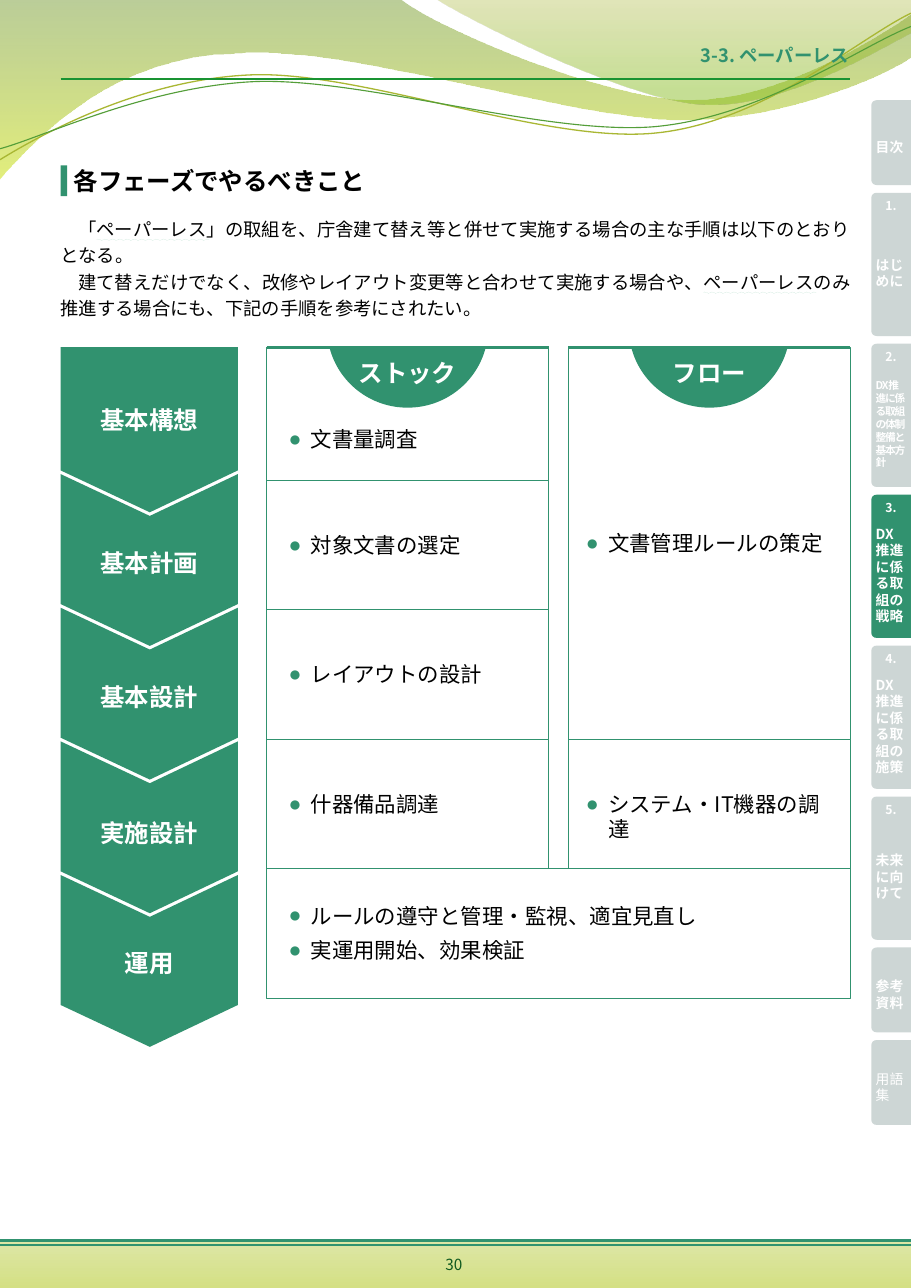
import pptx
import pptx.util
import pptx.dml.color
import pptx.enum.shapes
import pptx.enum.text
import pptx.oxml
import pptx.oxml.ns
from lxml import etree

WIDTH, HEIGHT = 8.27, 11.69
LEFT, RIGHT = 0.55, 7.72
TOP, PITCH = 3.15, 1.175
STOCK, FLOW, COL = 2.42, 5.16, 2.56
SANS = "Noto Sans CJK JP"
HEX = {
    "green": "31926F", "rule": "199332", "tab": "CDD6D5", "white": "FFFFFF",
    "black": "000000", "page": "0F591F", "gold": "A9B733", "leaf": "549E39",
    "wavy": "ACD9C5", "moss": "69921C", "lime": "CCE10F", "olive": "9BAA1A",
    "grass": "81BA16", "pale": "DDE6A6", "straw": "D4E084",
}
ALIGN = pptx.enum.text.PP_ALIGN
ANCHOR = pptx.enum.text.MSO_ANCHOR
SHAPE = pptx.enum.shapes.MSO_SHAPE
inch = pptx.util.Inches
qn = pptx.oxml.ns.qn

PHASES = [("基本構想", 3.8), ("基本計画", 5.1), ("基本設計", 6.32),
          ("実施設計", 7.55), ("運用", 8.73)]
TABS = [("", "目次", 9), ("1.", "はじめに", 9),
        ("2.", "DX推進に係る取組の体制整備と基本方針", 7),
        ("3.", "DX推進に係る取組の戦略", 9), ("4.", "DX推進に係る取組の施策", 9),
        ("5.", "未来に向けて", 9), ("", "参考資料", 9), ("", "用語集", 9)]
INTRO = [
    ["「", "ペーパーレス", "」の取組を、庁舎建て替え等と併せて実施する場合の主な手順は以下のとおりとなる。"],
    ["建て替えだけでなく、改修やレイアウト変更等と合わせて実施する場合や、", "ペーパーレス",
     "のみ推進する場合にも、下記の手順を参考にされたい。"],
]


def color(name):
    return pptx.dml.color.RGBColor.from_string(HEX[name])


def row(n):
    """Top edge of row n of the task grid; the first row is a little taller."""
    return 4.36 + PITCH * (n - 1) if n else TOP


def style(run, size, tint, bold=False, face=SANS):
    form = {"size": pptx.util.Pt(size), "bold": bold, "name": face}
    for key, value in form.items():
        setattr(run.font, key, value)
    run.font.color.rgb = color(tint)
    latin = run.font._element.find(qn("a:latin"))
    latin.addnext(etree.Element(qn("a:ea"), typeface=face))


def frame(shape, anchor=ANCHOR.TOP, low=0):
    text = shape.text_frame
    form = {"margin_left": 0, "margin_top": 0, "margin_right": 0,
            "margin_bottom": inch(low), "word_wrap": True,
            "vertical_anchor": anchor,
            "auto_size": pptx.enum.text.MSO_AUTO_SIZE.NONE}
    for key, value in form.items():
        setattr(text, key, value)
    return text


def write(para, words, size, tint, align=ALIGN.LEFT, lead=1.2, **font):
    para.alignment = align
    para.line_spacing = pptx.util.Pt(round(size * lead, 1))
    runs = []
    for word in words:
        run = para.add_run()
        run.text = word
        style(run, size, tint, **font)
        runs.append(run)
    return runs


def label(slide, box, text, size, tint, align=ALIGN.LEFT, anchor=ANCHOR.MIDDLE, **font):
    shape = slide.shapes.add_textbox(*map(inch, box))
    words = frame(shape, anchor)
    runs = write(words.paragraphs[0], [text], size, tint, align, **font)
    return words, runs[0]


def paint(shape, fill=None, line=None, width=0.5):
    shape.shadow.inherit = False
    if fill:
        shape.fill.solid()
        shape.fill.fore_color.rgb = color(fill)
    else:
        shape.fill.background()
    if line:
        shape.line.color.rgb = color(line)
        shape.line.width = pptx.util.Pt(width)
    else:
        shape.line.fill.background()


def blend(shape, stops):
    """Top-to-bottom gradient of (place, colour, opacity in percent)."""
    shape.fill.gradient()
    shape.fill.gradient_angle = 270
    for stop, (place, tint, alpha) in zip(shape.fill.gradient_stops, stops):
        stop.position = place
        stop.color.rgb = color(tint)
    grad = shape.element.spPr.find(qn("a:gradFill"))
    for node, (place, tint, alpha) in zip(grad.iter(qn("a:srgbClr")), stops):
        etree.SubElement(node, qn("a:alpha"), val=str(alpha * 1000))


def outline(slide, start, steps, close=True, **look):
    """Freeform of lines (2 numbers a step) and Bezier curves (6 numbers)."""
    points = [(step[i], step[i + 1]) for step in steps for i in range(0, len(step), 2)]
    build = slide.shapes.build_freeform(*map(inch, start), scale=1.0)
    build.add_line_segments([tuple(map(inch, point)) for point in points], close=close)
    shape = build.convert_to_shape()
    paint(shape, **look)
    lines = iter(list(shape.element.iter(qn("a:lnTo"))))
    for step in steps:
        first = next(lines)
        if len(step) == 6:
            first.tag = qn("a:cubicBezTo")
            for extra in (next(lines), next(lines)):
                first.append(extra[0])
                extra.getparent().remove(extra)
    return shape


def rect(slide, box, **look):
    shape = slide.shapes.add_shape(SHAPE.RECTANGLE, *map(inch, box))
    paint(shape, **look)
    return shape


def rule(slide, left, right, y, tint, width):
    line = slide.shapes.add_connector(
        pptx.enum.shapes.MSO_CONNECTOR.STRAIGHT, *map(inch, (left, y, right, y)))
    line.line.color.rgb = color(tint)
    line.line.width = pptx.util.Pt(width)
    etree.SubElement(line._element.spPr, qn("a:effectLst"))


def waves(slide):
    broad = outline(slide, (0, 0), [
        (3.64, 0), (3.93, 0.24, 5.49, 0.91, 6.27, 0.91),
        (7.05, 0.91, 7.92, 0.37, WIDTH, 0.13), (WIDTH, 0.52),
        (8.13, 0.63, 7.19, 1.09, 6.17, 1.09), (5.14, 1.08, 3.15, 0.4, 2.13, 0.49),
        (1.07, 0.51, 0.38, 1.19, 0, 1.63)])
    blend(broad, [(0, "moss", 45), (1, "lime", 55)])
    small = outline(slide, (3.96, 0), [
        (4.21, 0.16, 5.64, 0.89, 6.36, 0.94), (7.07, 0.99, 7.95, 0.46, WIDTH, 0.3),
        (WIDTH, 0)])
    blend(small, [(0, "olive", 30), (0.8, "grass", 45)])
    outline(slide, (0, 1.45), [
        (0.39, 1.21, 1.29, 0.72, 2.28, 0.68), (3.27, 0.64, 4.93, 1.3, 5.93, 1.21),
        (6.93, 1.12, 7.79, 0.35, WIDTH, 0.12)], close=False, line="gold", width=0.85)
    outline(slide, (0, 1.35), [
        (0.38, 1.25, 1.34, 0.78, 2.33, 0.74), (3.32, 0.71, 4.95, 1.23, 5.94, 1.15),
        (6.93, 1.06, 7.79, 0.43, WIDTH, 0.24)], close=False, line="leaf", width=0.75)


def footer(slide):
    band = rect(slide, (0, 11.26, WIDTH, HEIGHT - 11.26))
    blend(band, [(0, "pale", 100), (1, "straw", 100)])
    rule(slide, 0, WIDTH, 11.26, "green", 1.5)
    rule(slide, 0, WIDTH, 11.3, "green", 1)
    label(slide, (3.19, 11.39, 1.86, 0.17), "30", 10, "page", ALIGN.CENTER)


def tabs(slide):
    top, left, bend = 0.91, 7.91, 0.05
    for mark, name, size in TABS:
        high = 1.3 if mark else 0.77
        end = top + high
        outline(slide, (WIDTH, end), [
            (left + bend, end), (left + 0.02, end, left, end - 0.02, left, end - bend),
            (left, top + bend), (left, top + 0.02, left + 0.02, top, left + bend, top),
            (WIDTH, top)], fill="green" if mark == "3." else "tab")
        if mark:
            label(slide, (7.97, top + 0.05, 0.24, 0.13), mark, 8, "white",
                  ALIGN.CENTER, bold=True)
        head = 0.2 if mark else 0.12
        words, run = label(slide, (7.95, top + head, 0.28, high - head - 0.04), name,
                           size, "white", bold=name != "用語集")
        words._txBody.bodyPr.set("vert", "wordArtVertRtl")
        if size == 7:
            run.font._element.set("spc", "-80")
        top = end + 0.07


def heading(slide):
    rule(slide, LEFT, RIGHT, 0.72, "rule", 1.5)
    label(slide, (5.45, 0.4, 2.26, 0.18), "3-3. ペーパーレス", 12, "green",
          ALIGN.RIGHT, ANCHOR.TOP, bold=True)
    rect(slide, (LEFT, 1.5, 0.06, 0.28), fill="green")
    title = slide.shapes.title
    for key, value in zip(("left", "top", "width", "height"), (0.67, 1.51, 7.05, 0.27)):
        setattr(title, key, inch(value))
    write(frame(title).paragraphs[0], ["各フェーズでやるべきこと"], 16, "black", bold=True)


def intro(slide):
    box = slide.shapes.add_textbox(*map(inch, (LEFT, 1.94, RIGHT - LEFT, 0.97)))
    words = frame(box)
    for i, parts in enumerate(INTRO):
        para = words.add_paragraph() if i else words.paragraphs[0]
        runs = write(para, parts, 12, "black", ALIGN.JUSTIFY, 1.44)
        para._p.get_or_add_pPr().set("indent", str(inch(0.16)))
        font = runs[1].font
        font.underline = pptx.enum.text.MSO_UNDERLINE.WAVY_LINE
        under = etree.Element(qn("a:uFill"))
        solid = etree.SubElement(under, qn("a:solidFill"))
        etree.SubElement(solid, qn("a:srgbClr"), val=HEX["wavy"])
        font._element.find(qn("a:latin")).addprevious(under)


def phases(slide):
    mid, end, notch = 1.36, 2.16, 0.38
    for i, (name, y) in enumerate(PHASES):
        top = 3.09 + 1.213 * i
        low = top + 1.18
        steps = [(LEFT, low), (mid, low + notch), (end, low)]
        steps += [(end, top), (mid, top + notch)] if i else [(end, TOP)]
        outline(slide, (LEFT, top if i else TOP), steps, fill="green")
        label(slide, (LEFT, y - 0.13, end - LEFT, 0.27), name, 16, "white",
              ALIGN.CENTER, bold=True)


def cell(slide, left, first, last, items, wide, pad=0.2, shift=0):
    """Bordered cell over rows first to last, with its bullets half way down."""
    top, end = row(first), row(last)
    rect(slide, (left, top, FLOW + COL - left if last == 5 else COL, end - top),
         fill="white", line="green")
    high = 0.24 + 0.32 * (len(items) - 1)
    y = (top + end - high) / 2 + shift
    words = frame(slide.shapes.add_textbox(*map(inch, (left + pad, y, wide, high))))
    for i, item in enumerate(items):
        para = words.add_paragraph() if i else words.paragraphs[0]
        props = para._p.get_or_add_pPr()
        props.set("marL", str(inch(0.2)))
        props.set("indent", str(-inch(0.2)))
        tint = etree.SubElement(props, qn("a:buClr"))
        etree.SubElement(tint, qn("a:srgbClr"), val=HEX["green"])
        etree.SubElement(props, qn("a:buFont"), typeface="Arial")
        etree.SubElement(props, qn("a:buChar"), char="●")
        para.space_after = pptx.util.Pt(6)
        write(para, [item], 14, "black")


def crown(slide, left, name):
    """Thick top rule of a column, with its name in a half disc."""
    rule(slide, left, left + COL, TOP, "green", 2)
    mid, low = left + COL / 2, TOP + 0.55
    disc = outline(slide, (mid - 0.71, TOP), [
        (mid - 0.63, TOP + 0.32, mid - 0.34, low, mid, low),
        (mid + 0.34, low, mid + 0.63, TOP + 0.32, mid + 0.71, TOP)], fill="green")
    words = frame(disc, ANCHOR.MIDDLE, low=0.08)
    write(words.paragraphs[0], [name], 16, "white", ALIGN.CENTER, bold=True, face="Arial")


def main():
    deck = pptx.Presentation()
    deck.slide_width, deck.slide_height = inch(WIDTH), inch(HEIGHT)
    slide = deck.slides.add_slide(deck.slide_layouts[5])
    for part in (waves, footer, tabs, heading, intro, phases):
        part(slide)
    cell(slide, FLOW, 0, 3, ["文書管理ルールの策定"], 2.23, 0.16)
    cell(slide, FLOW, 3, 4, ["システム・IT機器の調達"], 2.23, 0.16)
    tasks = ["文書量調査", "対象文書の選定", "レイアウトの設計", "什器備品調達"]
    for i, task in enumerate(tasks):
        cell(slide, STOCK, i, i + 1, [task], 2.05, shift=0 if i else 0.23)
    cell(slide, STOCK, 4, 5, ["ルールの遵守と管理・監視、適宜見直し", "実運用開始、効果検証"], 3.77)
    crown(slide, FLOW, "フロー")
    crown(slide, STOCK, "ストック")
    deck.save("out.pptx")


if __name__ == "__main__":
    main()
